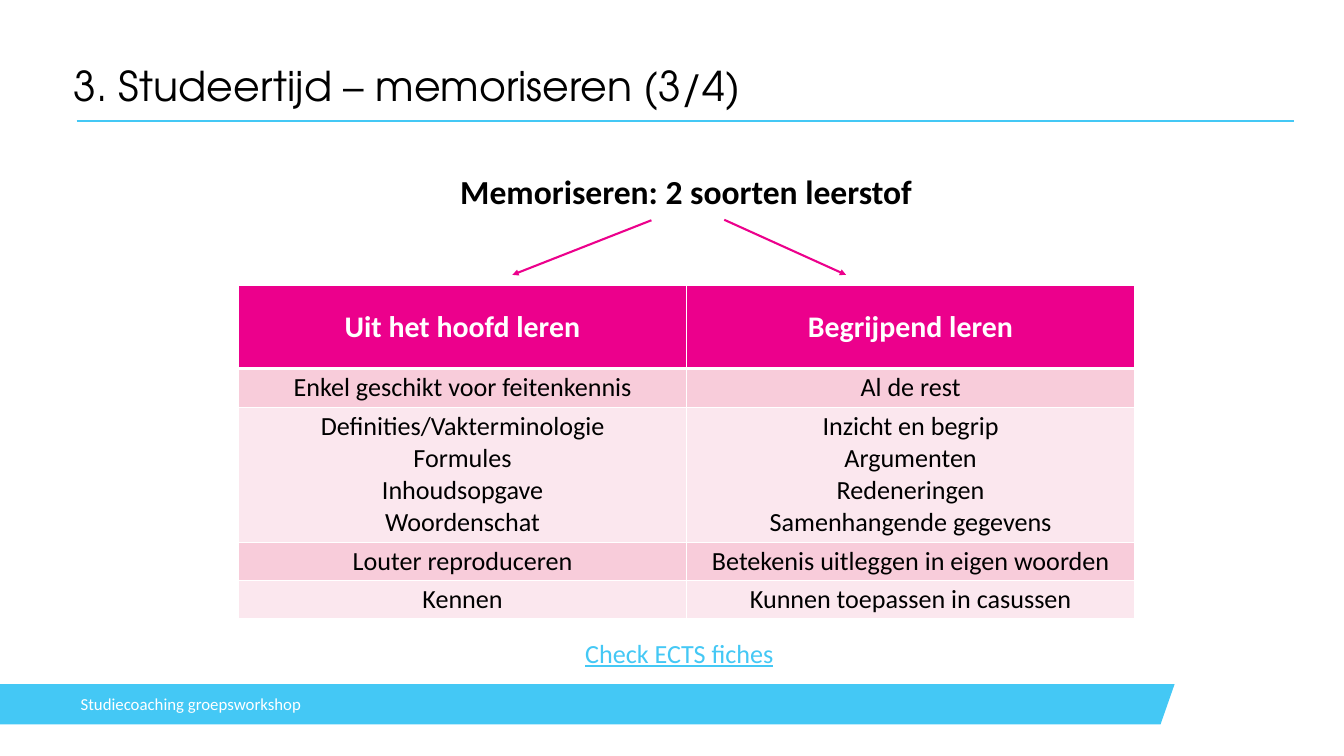
from lxml.etree import SubElement as Sub
from pptx import Presentation
from pptx.dml.color import RGBColor as Rgb
from pptx.enum.shapes import MSO_CONNECTOR as Conn
from pptx.enum.text import MSO_ANCHOR as Anchor, PP_ALIGN as Align
from pptx.oxml import parse_xml
from pptx.oxml.ns import nsdecls, qn
from pptx.util import Pt

HEX = {"black": "000000", "white": "FFFFFF", "blue": "44C8F5",
       "pink": "EC008C", "dark": "F8CCDA", "light": "FBE7EE"}
SANS, HEAD = "Calibri", "TeX Gyre Adventor"

TITLE = "3. Studeertijd – memoriseren (3/4)"
TOPIC = "Memoriseren: 2 soorten leerstof"
LINK = "Check ECTS fiches"
FOOT = "Studiecoaching groepsworkshop"
ROWS = [
    (89, "Uit het hoofd leren", "Begrijpend leren"),
    (41, "Enkel geschikt voor feitenkennis", "Al de rest"),
    (145, "Definities/Vakterminologie\nFormules\nInhoudsopgave\nWoordenschat",
     "Inzicht en begrip\nArgumenten\nRedeneringen\nSamenhangende gegevens"),
    (41, "Louter reproduceren", "Betekenis uitleggen in eigen woorden"),
    (41, "Kennen", "Kunnen toepassen in casussen"),
]
ARROWS = [((698, 236), (549, 294.5)), ((776, 235.5), (906.5, 294.5))]
BAND = [(0, 733), (1258.5, 733), (1243.5, 776), (0, 776)]


def color(name):
    return Rgb.from_string(HEX[name])


def write(frame, text, size, tint, face=SANS, bold=False, align=Align.LEFT,
          space=None, under=None):
    frame.text = text
    for para in frame.paragraphs:
        para.alignment = align
        para.line_spacing = space
        for run in para.runs:
            font = run.font
            font.name, font.size, font.bold = face, Pt(size), bold
            font.underline = under
            font.color.rgb = color(tint)


def pad(frame, inset=0):
    frame.margin_left = frame.margin_right = Pt(inset)
    frame.margin_top = frame.margin_bottom = Pt(inset)
    frame.vertical_anchor = Anchor.MIDDLE


def box(slide, area, text, size, tint, **style):
    frame = slide.shapes.add_textbox(*map(Pt, area)).text_frame
    frame.word_wrap = True
    write(frame, text, size, tint, **style)
    return frame


def rule(slide, start, end, tint, arrow=False):
    line = slide.shapes.add_connector(Conn.STRAIGHT, *map(Pt, start + end))
    line.line.color.rgb = color(tint)
    line.line.width = Pt(2.25)
    props = line._element.spPr
    if arrow:
        Sub(props.find(qn("a:ln")), qn("a:tailEnd"), type="triangle")
    Sub(props, qn("a:effectLst"))


def edge(cell, row):
    props = cell._tc.get_or_add_tcPr()
    wide = {"T": 3 if row == 1 else 1, "B": 3 if row == 0 else 1}
    for spot, side in enumerate("LRTB"):
        props.insert(spot, parse_xml(
            f'<a:ln{side} {nsdecls("a")} w="{Pt(wide.get(side, 1))}"><a:solidFill>'
            f'<a:srgbClr val="{HEX["white"]}"/></a:solidFill></a:ln{side}>'))


def grid(slide):
    total = sum(row[0] for row in ROWS)
    area = map(Pt, (255.6, 306, 960, total))
    table = slide.shapes.add_table(len(ROWS), 2, *area).table
    for r, (tall, *texts) in enumerate(ROWS):
        table.rows[r].height = Pt(tall)
        top = r == 0
        fill = "pink" if top else "dark" if r % 2 else "light"
        for c, text in enumerate(texts):
            cell = table.cell(r, c)
            cell.fill.solid()
            cell.fill.fore_color.rgb = color(fill)
            cell.vertical_anchor = Anchor.MIDDLE
            write(cell.text_frame, text, 32 if top else 28,
                  "white" if top else "black", bold=top, align=Align.CENTER)
            edge(cell, r)


def main():
    """Build the slide on two ways of memorising."""
    deck = Presentation()
    deck.slide_width, deck.slide_height = Pt(1440), Pt(810)
    slide = deck.slides.add_slide(deck.slide_layouts[5])

    pen = slide.shapes.build_freeform(*map(Pt, BAND[0]))
    pen.add_line_segments([tuple(map(Pt, dot)) for dot in BAND[1:]])
    band = pen.convert_to_shape()
    band.shadow.inherit = False
    band.fill.solid()
    band.fill.fore_color.rgb = color("blue")
    band.line.fill.background()

    rule(slide, (82, 129.6), (1386, 129.6), "blue")
    title = slide.shapes.title
    title.left, title.top, title.width, title.height = map(
        Pt, (78.5, 69.8, 1305, 49.7))
    write(title.text_frame, TITLE, 44, "black", face=HEAD, space=0.9)
    pad(title.text_frame)

    box(slide, (82.8, 185, 1305, 50), TOPIC, 36, "black", bold=True,
        align=Align.CENTER, space=0.9)
    pad(box(slide, (86.4, 732.5, 486, 43), FOOT, 18, "white"))
    grid(slide)
    for start, end in ARROWS:
        rule(slide, start, end, "pink", arrow=True)
    box(slide, (620, 679, 221, 41), LINK, 28, "blue", under=True)
    deck.save("out.pptx")


if __name__ == "__main__":
    main()
